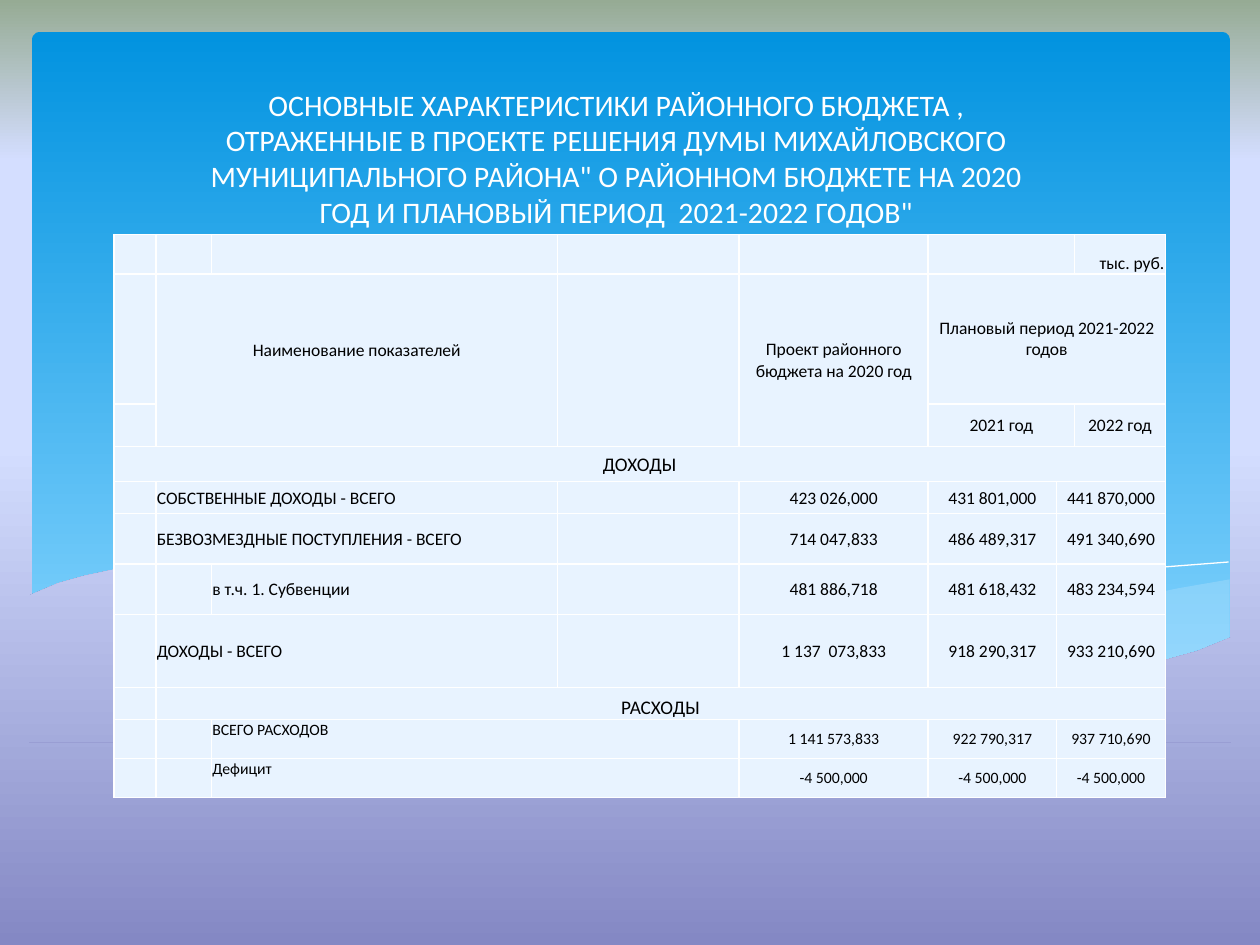
from lxml import etree
from pptx import Presentation
from pptx import util as u
from pptx.dml.color import RGBColor
from pptx.enum import shapes, text
from pptx.oxml.ns import qn

Cm, Pt = u.Cm, u.Pt
LEFT, CENTER, RIGHT = text.PP_ALIGN.LEFT, text.PP_ALIGN.CENTER, text.PP_ALIGN.RIGHT
TOP, MIDDLE, BOTTOM = text.MSO_ANCHOR.TOP, text.MSO_ANCHOR.MIDDLE, text.MSO_ANCHOR.BOTTOM

SKY = [(0, "8488C4"), (53, "D4DEFF"), (83, "D4DEFF"), (100, "96AB94")]
PANEL = [(0, "0293E0"), (100, "83D3FE")]

# Wave outlines, in cm
PALE_RIGHT = [(24.79, 11.68), (23.75, 11.86), (22.63, 12.09), (21.87, 12.27), (20.45, 12.62),
              (19.13, 12.9), (17.93, 13.16), (16.79, 13.34), (17.91, 13.49), (19.23, 13.61),
              (20.68, 13.67), (21.92, 13.59), (22.99, 13.44), (23.93, 13.18), (24.79, 12.88)]
PALE_MIDDLE = [(22.68, 13.54), (21.26, 13.34), (19.69, 13.06), (17.93, 12.7), (15.98, 12.24),
               (14.45, 11.89), (13.06, 11.63), (11.81, 11.46), (10.13, 11.33), (8.74, 11.33),
               (7.26, 11.48), (8.69, 11.66), (10.26, 11.96), (12.47, 12.5), (14.38, 12.93),
               (16.1, 13.23), (17.65, 13.46), (19.33, 13.64), (20.78, 13.69), (21.77, 13.64)]
LINE_FALLING = [(7.85, 11.58), (8.74, 11.43), (10.19, 11.35), (11.91, 11.4), (13.54, 11.53),
                (15.44, 11.79), (17.65, 12.17), (20.19, 12.75), (23.04, 13.51)]
LINE_RISING = [(15.57, 13.13), (17.65, 12.6), (19.71, 12.12), (22, 11.66), (23.47, 11.43),
               (24.77, 11.33)]
COVER = [(24.82, 12.85), (24.13, 13.13), (23.37, 13.34), (22.23, 13.54), (20.9, 13.64),
         (19.33, 13.59), (17.48, 13.41), (15.32, 13.06), (13.44, 12.67), (11.35, 12.19),
         (9.27, 11.73), (7.42, 11.46), (5.84, 11.3), (4.5, 11.28), (3.35, 11.33),
         (2.41, 11.46), (1.7, 11.61), (1.17, 11.76), (0.58, 12.01), (0.58, 14.96),
         (24.82, 14.96)]

TITLE = ('ОСНОВНЫЕ ХАРАКТЕРИСТИКИ РАЙОННОГО БЮДЖЕТА , ОТРАЖЕННЫЕ В ПРОЕКТЕ РЕШЕНИЯ ДУМЫ '
         'МИХАЙЛОВСКОГО МУНИЦИПАЛЬНОГО РАЙОНА" О РАЙОННОМ БЮДЖЕТЕ НА 2020 ГОД '
         'И ПЛАНОВЫЙ ПЕРИОД  2021-2022 ГОДОВ"')
COLS = [0.84, 1.12, 6.98, 3.66, 3.81, 2.59, 0.36, 1.83]
ROWS = [0.79, 2.62, 0.86, 0.71, 0.64, 1.02, 1.02, 1.47, 0.64, 0.79, 0.79]
# Row, column, text, size, alignment, anchor
HEADINGS = [
    (0, 7, "тыс. руб.", 10, RIGHT, BOTTOM),
    (1, 1, "Наименование показателей", 10, CENTER, MIDDLE),
    (1, 4, "Проект районного бюджета на 2020 год", 10, CENTER, MIDDLE),
    (1, 5, "Плановый период 2021-2022 годов", 10, CENTER, MIDDLE),
    (2, 5, "2021 год", 10, CENTER, MIDDLE),
    (2, 7, "2022 год", 10, CENTER, MIDDLE),
    (3, 0, "ДОХОДЫ", 11, CENTER, MIDDLE),
    (8, 1, "РАСХОДЫ", 11, CENTER, BOTTOM),
]
# Row, label column, label, label anchor, size, values for 2020, 2021 and 2022
FIGURES = [
    (4, 1, "СОБСТВЕННЫЕ ДОХОДЫ - ВСЕГО", MIDDLE, 10, ("423 026,000", "431 801,000", "441 870,000")),
    (5, 1, "БЕЗВОЗМЕЗДНЫЕ ПОСТУПЛЕНИЯ - ВСЕГО", MIDDLE, 10,
     ("714 047,833", "486 489,317", "491 340,690")),
    (6, 2, "в т.ч. 1. Субвенции", MIDDLE, 10, ("481 886,718", "481 618,432", "483 234,594")),
    (7, 1, "ДОХОДЫ - ВСЕГО", MIDDLE, 10, ("1 137  073,833", "918 290,317", "933 210,690")),
    (9, 2, "ВСЕГО РАСХОДОВ", TOP, 9, ("1 141 573,833", "922 790,317", "937 710,690")),
    (10, 2, "Дефицит", TOP, 9, ("-4 500,000",) * 3),
]
# First row, first column, last row, last column
MERGES = [(0, 5, 0, 6), (1, 1, 2, 2), (1, 3, 2, 3), (1, 4, 2, 4), (1, 5, 1, 7), (2, 5, 2, 6),
          (3, 0, 3, 7), (8, 1, 8, 7)]
MERGES += [(r, 1, r, 2) for r in (4, 5, 7)] + [(r, 2, r, 3) for r in (9, 10)]
MERGES += [(row[0], 6, row[0], 7) for row in FIGURES]


def color(value):
    return RGBColor.from_string(value)


def sub(parent, tag, **attrs):
    return etree.SubElement(parent, qn(tag), **attrs)


class Deck:
    """Style of the deck and the slide being filled."""
    font = "Calibri"
    cell_fill = "E8F3FF"
    border = "FFFFFF"

    def __init__(self, prs):
        self.s = prs.slides.add_slide(prs.slide_layouts[6])

    def gradient(self, fill, owner, stops, angle):
        fill.gradient()
        fill.gradient_angle = angle
        gs_list = owner.find(".//" + qn("a:gsLst"))
        for gs in list(gs_list):
            gs_list.remove(gs)
        for pos, value in stops:
            sub(sub(gs_list, "a:gs", pos=str(pos * 1000)), "a:srgbClr", val=value)

    def background(self, stops):
        self.gradient(self.s.background.fill, self.s.element, stops, 90)

    def panel(self, x, y, w, h, stops):
        sp = self.s.shapes.add_shape(shapes.MSO_SHAPE.ROUNDED_RECTANGLE, Cm(x), Cm(y), Cm(w), Cm(h))
        sp.adjustments[0] = 0.013
        sp.shadow.inherit = False
        sp.line.fill.background()
        self.gradient(sp.fill, sp.element, stops, 270)

    def outline(self, points, close):
        pts = [(Cm(x), Cm(y)) for x, y in points]
        builder = self.s.shapes.build_freeform(*pts[0])
        builder.add_line_segments(pts[1:], close=close)
        sp = builder.convert_to_shape()
        sp.shadow.inherit = False
        return sp

    def wave(self, points, value, opacity):
        sp = self.outline(points, True)
        sp.line.fill.background()
        sp.fill.solid()
        sp.fill.fore_color.rgb = color(value)
        sub(sp.element.find(".//" + qn("a:srgbClr")), "a:alpha", val=str(opacity * 1000))

    def hairline(self, points, value):
        sp = self.outline(points, False)
        sp.fill.background()
        sp.line.color.rgb = color(value)
        sp.line.width = Pt(0)

    def cover(self, points):
        """Closed outline filled with the slide background."""
        sp = self.outline(points, True)
        sp.line.fill.background()
        sp.element.remove(sp.element.find(qn("p:style")))
        sp.element.set("useBgFill", "1")

    def set_text(self, tf, words, size, value, align):
        tf.text = words
        p = tf.paragraphs[0]
        p.alignment = align
        for r in p.runs:
            r.font.name, r.font.size = self.font, Pt(size)
            r.font.color.rgb = color(value)

    def title(self, x, y, w, h, words):
        tf = self.s.shapes.add_textbox(Cm(x), Cm(y), Cm(w), Cm(h)).text_frame
        tf.word_wrap = True
        tf.vertical_anchor = BOTTOM
        self.set_text(tf, words, 17, "FFFFFF", CENTER)

    def style_cell(self, cell):
        cell.margin_left = cell.margin_right = cell.margin_top = Cm(0.02)
        cell.margin_bottom = 0
        tc_pr = cell._tc.get_or_add_tcPr()
        for side in "LRTB":
            ln = sub(tc_pr, "a:ln" + side, w=str(Pt(1)))
            sub(sub(ln, "a:solidFill"), "a:srgbClr", val=self.border)
        cell.fill.solid()
        cell.fill.fore_color.rgb = color(self.cell_fill)
        if not cell.text_frame.text:
            sub(cell.text_frame.paragraphs[0]._p, "a:endParaRPr", sz="1000")

    def table(self, x, y, cols, rows, entries, merges):
        t = self.s.shapes.add_table(len(rows), len(cols), Cm(x), Cm(y),
                                    Cm(sum(cols)), Cm(sum(rows))).table
        t.first_row = t.horz_banding = False
        for col, width in zip(t.columns, cols):
            col.width = Cm(width)
        for row, height in zip(t.rows, rows):
            row.height = Cm(height)
        for r, c, words, size, align, anchor in entries:
            self.set_text(t.cell(r, c).text_frame, words, size, "000000", align)
            t.cell(r, c).vertical_anchor = anchor
        for cell in t.iter_cells():
            self.style_cell(cell)
        for r1, c1, r2, c2 in merges:
            t.cell(r1, c1).merge(t.cell(r2, c2))
        return t


def main():
    prs = Presentation()
    prs.slide_width, prs.slide_height = Cm(25.4), Cm(19.05)
    deck = Deck(prs)
    deck.background(SKY)
    deck.panel(0.64, 0.64, 24.16, 13.16, PANEL)
    deck.wave(PALE_RIGHT, "C6E7FC", 29)
    deck.wave(PALE_MIDDLE, "C6E7FC", 40)
    for points in (LINE_FALLING, LINE_RISING):
        deck.hairline(points, "FFFFFF")
    deck.cover(COVER)
    deck.title(3.51, 2.13, 17.83, 2.62, TITLE)

    entries = list(HEADINGS)
    for r, c, label, anchor, size, values in FIGURES:
        entries.append((r, c, label, size, LEFT, anchor))
        entries += [(r, 4 + i, v, size, CENTER, MIDDLE) for i, v in enumerate(values)]
    t = deck.table(2.3, 4.73, COLS, ROWS, entries, MERGES)
    t.cell(1, 1).margin_bottom = Cm(0.42)
    prs.save("out.pptx")


if __name__ == "__main__":
    main()
